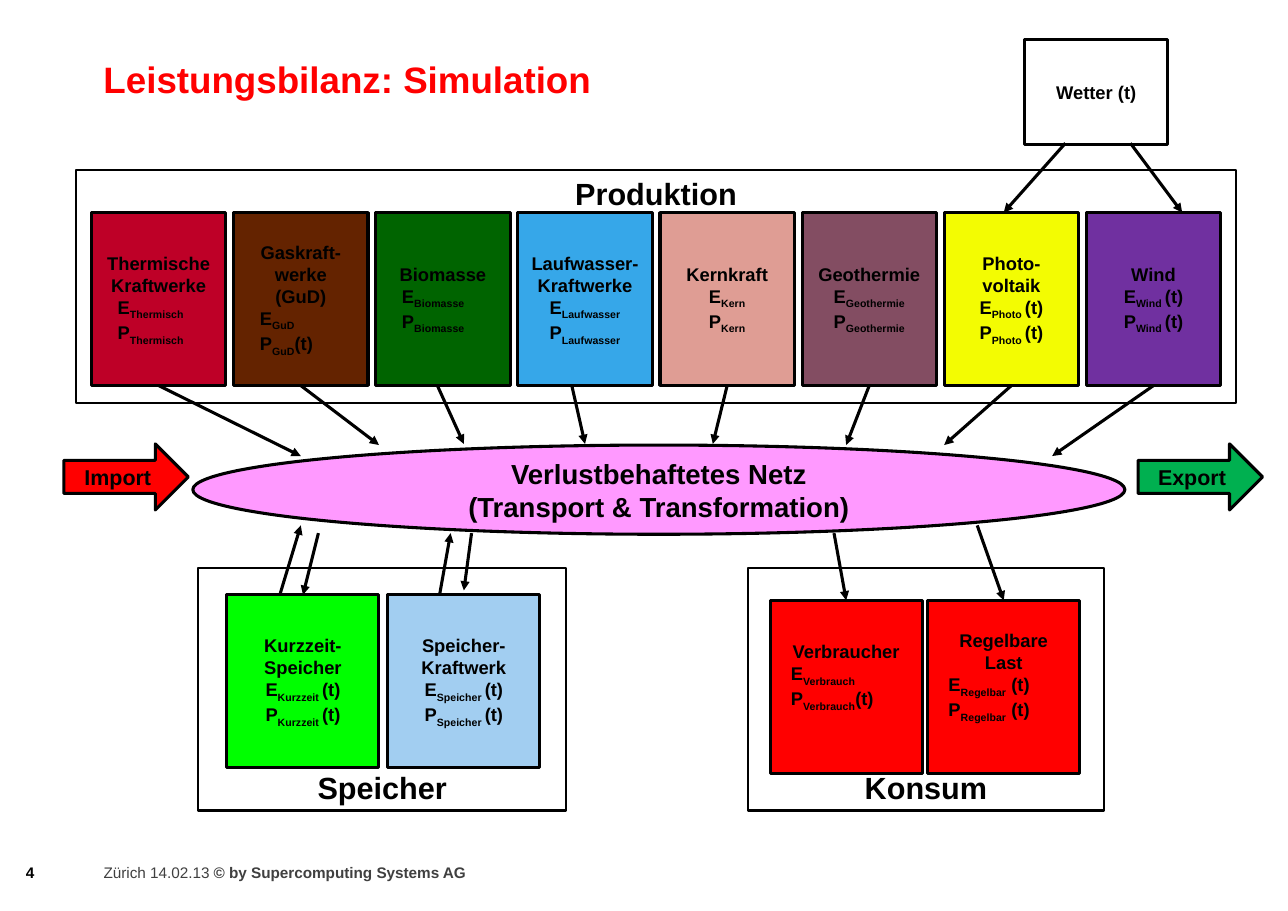
from lxml.etree import SubElement
from pptx import Presentation
from pptx.dml.color import RGBColor
from pptx.enum.shapes import MSO_CONNECTOR, MSO_SHAPE
from pptx.enum.text import MSO_ANCHOR, PP_ALIGN
from pptx.oxml.ns import qn
from pptx.util import Inches, Pt

COLORS = {
    "black": "000000", "white": "FFFFFF", "grey": "404040", "red": "FF0000",
    "crimson": "BE0027", "brown": "642300", "forest": "006400",
    "blue": "36A7E9", "salmon": "DF9D94", "mauve": "834D62",
    "yellow": "F3FC02", "purple": "7030A0", "pink": "FF99FF",
    "green": "00B050", "lime": "00FF00", "sky": "A2CEF1",
}
BOTTOM, TOP = 2, 0
BOX_H = 1.57

# name, subscript, suffix of E, suffix of P, left indent (None = centred), colour
PLANTS = [
    ("Thermische Kraftwerke", "Thermisch", "", "", 0.14, "crimson"),
    ("Gaskraft-werke\n(GuD)", "GuD", "", "(t)", 0.14, "brown"),
    ("Biomasse", "Biomasse", "", "", 0.14, "forest"),
    ("Laufwasser-Kraftwerke", "Laufwasser", "", "", None, "blue"),
    ("Kernkraft", "Kern", "", "", None, "salmon"),
    ("Geothermie", "Geothermie", "", "", None, "mauve"),
    ("Photo-\nvoltaik", "Photo ", "(t)", "(t)", None, "yellow"),
    ("Wind", "Wind ", "(t)", "(t)", None, "purple"),
]
STORES = [
    ("Kurzzeit-\nSpeicher", "Kurzzeit ", "(t)", "(t)", None, "lime"),
    ("Speicher-Kraftwerk", "Speicher ", "(t)", "(t)", None, "sky"),
]
CONSUMERS = [
    ("Verbraucher", "Verbrauch", "", "(t)", 0.09, "red"),
    ("Regelbare\nLast", "Regelbar", " (t)", " (t)", 0.09, "red"),
]


def rgb(name):
    return RGBColor.from_string(COLORS[name])


def style(p, size, color="black", bold=True, align=PP_ALIGN.CENTER):
    p.alignment = align
    p.font.name = "Arial"
    p.font.size = Pt(size)
    p.font.bold = bold
    p.font.color.rgb = rgb(color)


def add_text(s, x, y, w, h, parts, size, color, align=PP_ALIGN.LEFT):
    """Add a one-line text box from (text, bold) parts."""
    tf = s.shapes.add_textbox(Inches(x), Inches(y), Inches(w), Inches(h)).text_frame
    tf.word_wrap = True
    tf.margin_left = tf.margin_right = Inches(0.11)
    tf.margin_top = tf.margin_bottom = Inches(0.06)
    p = tf.paragraphs[0]
    style(p, size, color, parts[0][1], align)
    for text, bold in parts:
        r = p.add_run()
        r.text = text
        if bold != parts[0][1]:
            r.font.bold = bold


def add_block(s, kind, x, y, w, h, text, size, fill=None, line=2,
              anchor=MSO_ANCHOR.MIDDLE):
    sp = s.shapes.add_shape(kind, Inches(x), Inches(y), Inches(w), Inches(h))
    sp.shadow.inherit = False
    if fill:
        sp.fill.solid()
        sp.fill.fore_color.rgb = rgb(fill)
    else:
        sp.fill.background()
    sp.line.color.rgb = rgb("black")
    sp.line.width = Pt(line)
    tf = sp.text_frame
    tf.word_wrap = True
    tf.vertical_anchor = anchor
    p = tf.paragraphs[0]
    p.text = text
    style(p, size)
    return sp


def add_panel(s, x, y, w, h, text, anchor):
    add_block(s, MSO_SHAPE.RECTANGLE, x, y, w, h, text, 20, "white", 1.5, anchor)


def add_quantity(tf, symbol, subscript, suffix, indent):
    p = tf.add_paragraph()
    if indent is not None:
        p._p.get_or_add_pPr().set("marL", str(Inches(indent)))
    style(p, 12, align=PP_ALIGN.CENTER if indent is None else PP_ALIGN.LEFT)
    p.add_run().text = symbol
    r = p.add_run()
    r.text = subscript
    r._r.get_or_add_rPr().set("baseline", "-25000")
    if suffix:
        p.add_run().text = suffix


def add_units(s, units, x, y, w, pitch, bottom=0.05):
    """Add a row of equally spaced units, each with its E and P."""
    row = []
    for i, (name, subscript, e_suffix, p_suffix, indent, color) in enumerate(units):
        sp = add_block(s, MSO_SHAPE.RECTANGLE, x + i * pitch, y, w, BOX_H,
                       name, 12, color)
        sp.text_frame.margin_bottom = Inches(bottom)
        add_quantity(sp.text_frame, "E", subscript, e_suffix, indent)
        add_quantity(sp.text_frame, "P", subscript, p_suffix, indent)
        row.append(sp)
    return row


def add_arrow(s, x1, y1, x2, y2, source=None, target=None):
    """Add an arrow, joined to the source's bottom or the target's top if given."""
    c = s.shapes.add_connector(MSO_CONNECTOR.STRAIGHT, Inches(x1), Inches(y1),
                               Inches(x2), Inches(y2))
    if source is not None:
        c.begin_connect(source, BOTTOM)
    if target is not None:
        c.end_connect(target, TOP)
    c.line.color.rgb = rgb("black")
    c.line.width = Pt(2)
    SubElement(c.line._get_or_add_ln(), qn("a:tailEnd"), type="triangle")
    SubElement(c._element.spPr, qn("a:effectLst"))


def main():
    prs = Presentation()
    prs.slide_width, prs.slide_height = Inches(11.69), Inches(8.27)
    s = prs.slides.add_slide(prs.slide_layouts[6])

    add_text(s, 0, 7.78, 0.42, 0.32, [("4", True)], 10, "black", PP_ALIGN.RIGHT)
    add_text(s, 0.83, 7.78, 6.21, 0.28,
             [("Zürich 14.02.13 ", False), ("© by Supercomputing Systems AG", True)],
             10, "grey")
    add_text(s, 0.83, 0.46, 8.3, 1, [("Leistungsbilanz: Simulation", True)], 24, "red")

    add_panel(s, 0.69, 1.54, 10.53, 2.12, "Produktion", MSO_ANCHOR.TOP)
    (thermal, gas, _, _, nuclear, geothermal, photovoltaic,
     wind) = add_units(s, PLANTS, 0.83, 1.93, 1.22, 1.29)

    add_block(s, MSO_SHAPE.OVAL, 1.75, 4.04, 8.46, 0.81,
              "Verlustbehaftetes Netz\n(Transport & Transformation)", 18, "pink")
    for x, text, color in [(0.58, "Import", "red"), (10.33, "Export", "green")]:
        add_block(s, MSO_SHAPE.RIGHT_ARROW, x, 4.03, 1.13, 0.6, text, 14, color)

    add_panel(s, 6.79, 5.16, 3.23, 2.2, "Konsum", MSO_ANCHOR.BOTTOM)
    consumer, load = add_units(s, CONSUMERS, 6.99, 5.45, 1.38, 1.43, bottom=0.24)
    add_panel(s, 1.8, 5.16, 3.34, 2.2, "Speicher", MSO_ANCHOR.BOTTOM)
    short_term, _ = add_units(s, STORES, 2.06, 5.4, 1.38, 1.46)
    add_block(s, MSO_SHAPE.RECTANGLE, 9.3, 0.36, 1.3, 0.95, "Wetter (t)", 12)

    arrows = [
        # weather to plants
        (9.67, 1.3, 9.11, 1.93), (10.26, 1.3, 10.73, 1.93),
        # plants to grid
        (1.44, 3.5, 2.73, 4.14, thermal), (2.73, 3.5, 3.44, 4.04, gas),
        (3.97, 3.5, 4.21, 4.03), (5.19, 3.5, 5.31, 4.03),
        (6.6, 3.5, 6.47, 4.03, nuclear), (7.89, 3.5, 7.68, 4.04, geothermal),
        (9.18, 3.5, 8.57, 4.04, photovoltaic), (10.47, 3.5, 9.55, 4.14, wind),
        # grid and storage, both ways
        (2.54, 5.4, 2.73, 4.77), (2.89, 4.84, 2.75, 5.4, None, short_term),
        (3.99, 5.4, 4.09, 4.84), (4.28, 4.84, 4.21, 5.36),
        # grid to consumers
        (7.57, 4.84, 7.68, 5.45, None, consumer),
        (8.87, 4.77, 9.11, 5.45, None, load),
    ]
    for arrow in arrows:
        add_arrow(s, *arrow)

    prs.save("out.pptx")


if __name__ == "__main__":
    main()
